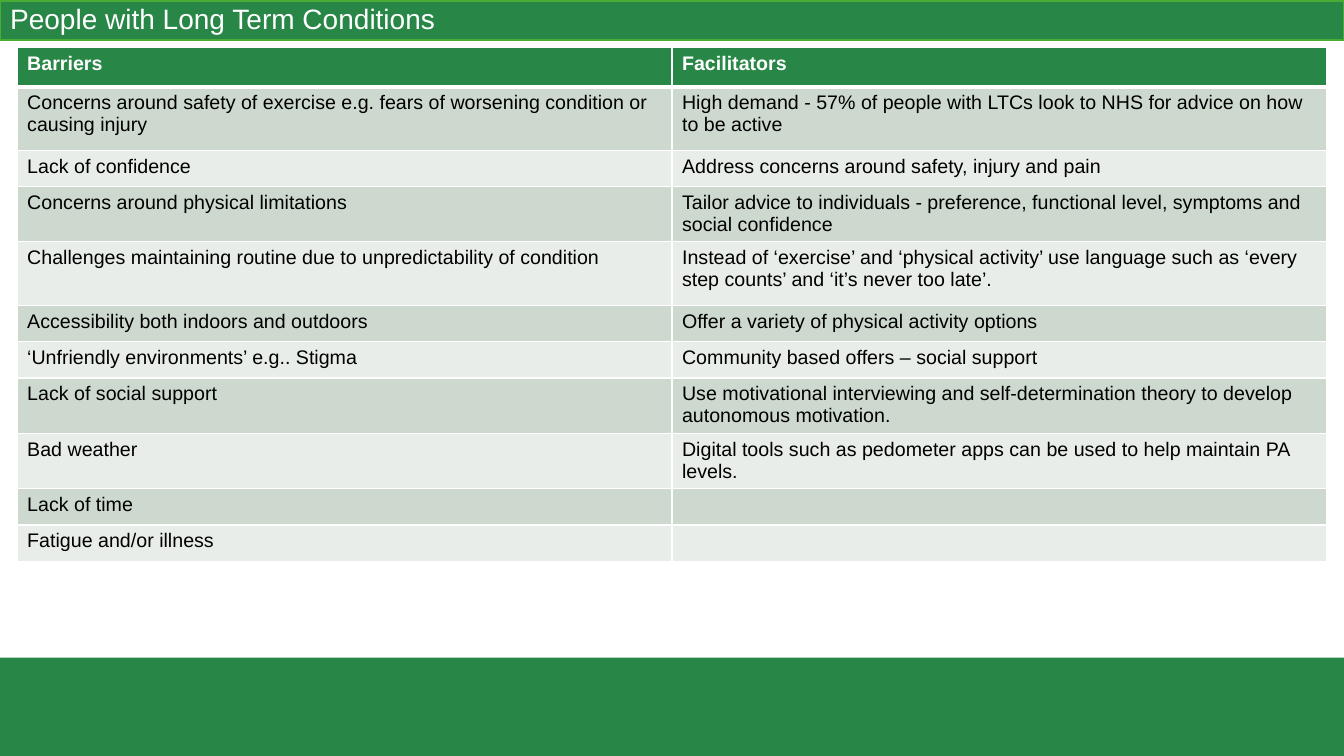
import pptx
import pptx.dml.color
import pptx.enum.shapes
import pptx.enum.text
import pptx.oxml
import pptx.oxml.ns
import pptx.util

SLIDE_W, SLIDE_H = 13.33, 7.5
GREEN, LIME, WHITE, BLACK = "288647", "49AC33", "FFFFFF", "000000"
BANDS = ("CDD9CF", "E8EDE9")
FONT = "Arial"

TABLE_LEFT, TABLE_TOP, TABLE_W = 0.17, 0.47, 12.99
HEADINGS = ("Barriers", "Facilitators")
# Row height, barrier, facilitator
FACTORS = (
    (0.63, "Concerns around safety of exercise e.g. fears of worsening condition or causing injury",
     "High demand - 57% of people with LTCs look to NHS for advice on how to be active"),
    (0.36, "Lack of confidence", "Address concerns around safety, injury and pain"),
    (0.55, "Concerns around physical limitations",
     "Tailor advice to individuals - preference, functional level, symptoms and social confidence"),
    (0.63, "Challenges maintaining routine due to unpredictability of condition",
     "Instead of ‘exercise’ and ‘physical activity’ use language such as "
     "‘every step counts’ and ‘it’s never too late’."),
    (0.36, "Accessibility both indoors and outdoors", "Offer a variety of physical activity options"),
    (0.36, "‘Unfriendly environments’ e.g.. Stigma", "Community based offers – social support"),
    (0.55, "Lack of social support",
     "Use motivational interviewing and self-determination theory to develop autonomous motivation."),
    (0.55, "Bad weather",
     "Digital tools such as pedometer apps can be used to help maintain PA levels."),
    (0.36, "Lack of time", ""),
    (0.36, "Fatigue and/or illness", ""),
)


def inches(*lengths):
    return [pptx.util.Inches(length) for length in lengths]


def paint(fill, colour):
    fill.solid()
    fill.fore_color.rgb = pptx.dml.color.RGBColor.from_string(colour)


def style_text(paragraph, size, colour, bold=False):
    for run in paragraph.runs:
        run.font.name = FONT
        run.font.size = pptx.util.Pt(size)
        run.font.bold = bold
        run.font.color.rgb = pptx.dml.color.RGBColor.from_string(colour)


def add_title(slide, text):
    title = slide.shapes.title
    title.left, title.top, title.width, title.height = inches(0, 0.01, SLIDE_W, 0.39)
    paint(title.fill, GREEN)
    paint(title.line.fill, LIME)
    title.line.width = pptx.util.Pt(1.5)
    frame = title.text_frame
    frame.text = text
    frame.word_wrap = True
    frame.auto_size = pptx.enum.text.MSO_AUTO_SIZE.NONE
    frame.vertical_anchor = pptx.enum.text.MSO_ANCHOR.MIDDLE
    frame.margin_left = frame.margin_right = frame.margin_top = frame.margin_bottom = 0
    heading = frame.paragraphs[0]
    heading.alignment = pptx.enum.text.PP_ALIGN.LEFT
    heading.line_spacing = 0.9
    heading._p.get_or_add_pPr().set("marL", str(pptx.util.Inches(0.1)))
    style_text(heading, 20, WHITE)


def add_footer_band(slide):
    band_h = 0.13 * SLIDE_H
    band = slide.shapes.add_shape(
        pptx.enum.shapes.MSO_SHAPE.RECTANGLE, *inches(0, SLIDE_H - band_h, SLIDE_W, band_h))
    band.shadow.inherit = False
    paint(band.fill, GREEN)
    band.line.fill.background()


def add_borders(cell, widths):
    """Draw white cell edges; widths maps each side (L, R, T, B) to points."""
    properties = cell._tc.get_or_add_tcPr()
    for position, (side, width) in enumerate(widths.items()):
        edge = pptx.oxml.parse_xml(
            f'<a:ln{side} {pptx.oxml.ns.nsdecls("a")} w="{pptx.util.Pt(width)}">'
            f'<a:solidFill><a:srgbClr val="{WHITE}"/></a:solidFill></a:ln{side}>')
        properties.insert(position, edge)


def fill_cell(cell, text, background, colour, bold, top, bottom):
    cell.text = text
    paint(cell.fill, background)
    paragraph = cell.text_frame.paragraphs[0]
    style_text(paragraph, 14, colour, bold)
    if not text:
        paragraph._p.get_or_add_endParaRPr().set("sz", "1400")
    add_borders(cell, {"L": 1, "R": 1, "T": top, "B": bottom})


def add_factor_table(slide):
    rows = ((0.39, *HEADINGS), *FACTORS)
    table = slide.shapes.add_table(
        len(rows), len(HEADINGS),
        *inches(TABLE_LEFT, TABLE_TOP, TABLE_W, sum(row[0] for row in rows))).table
    for column in table.columns:
        column.width = pptx.util.Inches(TABLE_W / len(HEADINGS))
    for index, (height, *texts) in enumerate(rows):
        table.rows[index].height = pptx.util.Inches(height)
        header = index == 0
        background = GREEN if header else BANDS[(index - 1) % 2]
        for column, text in enumerate(texts):
            fill_cell(table.cell(index, column), text, background,
                      WHITE if header else BLACK, header,
                      top=3 if index == 1 else 1, bottom=3 if header else 1)


def main():
    presentation = pptx.Presentation()
    presentation.slide_width, presentation.slide_height = inches(SLIDE_W, SLIDE_H)
    slide = presentation.slides.add_slide(presentation.slide_layouts[5])
    add_footer_band(slide)
    add_title(slide, "People with Long Term Conditions")
    add_factor_table(slide)
    presentation.save("out.pptx")


if __name__ == "__main__":
    main()
